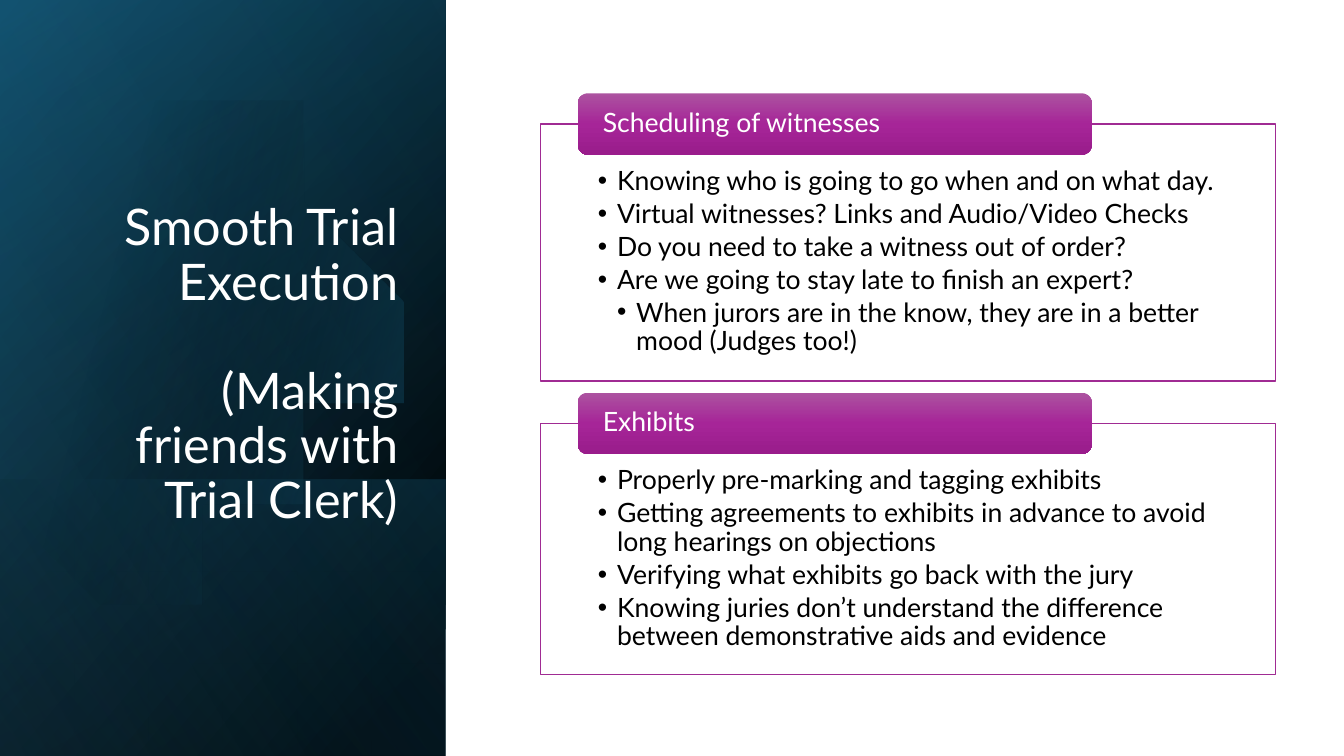
from lxml import etree
from pptx import Presentation
from pptx.dml.color import RGBColor
from pptx.enum.shapes import MSO_SHAPE
from pptx.enum.text import MSO_ANCHOR, PP_ALIGN
from pptx.oxml.ns import qn
from pptx.util import Inches, Pt

RECTANGLE, ROUNDED = MSO_SHAPE.RECTANGLE, MSO_SHAPE.ROUNDED_RECTANGLE
TOP, MIDDLE, BOTTOM = MSO_ANCHOR.TOP, MSO_ANCHOR.MIDDLE, MSO_ANCHOR.BOTTOM
LEFT, RIGHT = PP_ALIGN.LEFT, PP_ALIGN.RIGHT
FONT = "Lato"
WHITE, BLACK, PURPLE = "FFFFFF", "000000", "A02B93"

TITLE = ["Smooth Trial Execution", "(Making friends with Trial Clerk)"]

# Heading, panel top, panel height, bullets as (level, text)
SECTIONS = [
    ("Scheduling of witnesses", 1.23, 2.55, [
        (1, "Knowing who is going to go when and on what day."),
        (1, "Virtual witnesses? Links and Audio/Video Checks"),
        (1, "Do you need to take a witness out of order?"),
        (1, "Are we going to stay late to finish an expert?"),
        (2, "When jurors are in the know, they are in a better mood (Judges too!)"),
    ]),
    ("Exhibits", 4.2, 2.49, [
        (1, "Properly pre-marking and tagging exhibits"),
        (1, "Getting agreements to exhibits in advance to avoid long hearings on objections"),
        (1, "Verifying what exhibits go back with the jury"),
        (1, "Knowing juries don’t understand the difference between demonstrative aids and evidence"),
    ]),
]

# Gradient stops are (position %, colour, opacity %)
SIDEBAR_FRAME = (-1.54, 1.54, 7.5, 4.42)
BASE_LAYERS = [
    (SIDEBAR_FRAME, 50, [(8, BLACK, 100), (100, "104862", 100)]),
    (SIDEBAR_FRAME, 30, [(0, BLACK, 0), (99, "156082", 46)]),
    ((0.84, 3.92, 2.74, 4.42), 130, [(2, "156082", 29), (100, BLACK, 30)]),
]
GLOW_LAYER = (SIDEBAR_FRAME, 120, [(0, BLACK, 0), (99, "46B1E1", 11)])
DISC_STOPS = [(29, BLACK, 0), (100, "156082", 43)]
LABEL_STOPS = [(0, "AC53A0", 100), (50, "A62598", 100), (100, "991C8B", 100)]

# Disc outline: start point, then cubic curves (two handles and an end point)
DISC_START = (1.49, 1.1)
DISC_CURVES = [
    ((2.46, 1.12), (3.35, 1.77), (3.63, 2.75)),
    ((3.98, 3.97), (3.28, 5.23), (2.07, 5.58)),
    ((1.31, 5.8), (0.53, 5.61), (0, 5.16)),
    ((0, 4), (0, 2.8), (0, 1.61)),
    ((0.23, 1.42), (0.5, 1.28), (0.8, 1.19)),
    ((1.03, 1.13), (1.26, 1.1), DISC_START),
]
CURVE_STEPS = 16

PANEL_LEFT, PANEL_WIDTH = 5.36, 7.29
LABEL_INDENT, LABEL_WIDTH, LABEL_HEIGHT = 0.37, 5.1, 0.61
BULLET_INDENT = 0.19


def color(hex_text):
    return RGBColor.from_string(hex_text)


def fill_gradient(shape, angle, stops):
    shape.fill.gradient()
    gradient = shape._element.spPr.find(qn("a:gradFill"))
    gradient.find(qn("a:lin")).set("ang", str(angle * 60000))
    stop_list = gradient.find(qn("a:gsLst"))
    stop_list.clear()
    for position, hex_text, opacity in stops:
        stop = etree.SubElement(stop_list, qn("a:gs"), pos=str(position * 1000))
        tint = etree.SubElement(stop, qn("a:srgbClr"), val=hex_text)
        if opacity < 100:
            etree.SubElement(tint, qn("a:alpha"), val=str(opacity * 1000))


def add_plain(page, kind, frame):
    """Add a shape with no shadow and no outline."""
    shape = page.shapes.add_shape(kind, *map(Inches, frame))
    shape.shadow.inherit = False
    shape.line.fill.background()
    return shape


def add_layer(page, frame, angle, stops):
    """Add one turned and mirrored gradient layer of the sidebar."""
    layer = add_plain(page, RECTANGLE, frame)
    layer.rotation = 90
    layer._element.spPr.find(qn("a:xfrm")).set("flipH", "1")
    fill_gradient(layer, angle, stops)


def curve_points(start, curves):
    points = []
    for first, second, end in curves:
        for step in range(1, CURVE_STEPS + 1):
            t = step / CURVE_STEPS
            u = 1 - t
            points.append(tuple(
                u**3 * a + 3 * u * u * t * b + 3 * u * t * t * c + t**3 * d
                for a, b, c, d in zip(start, first, second, end)))
        start = end
    return points


def add_disc(page):
    builder = page.shapes.build_freeform(*DISC_START, scale=Inches(1))
    builder.add_line_segments(curve_points(DISC_START, DISC_CURVES))
    disc = builder.convert_to_shape()
    disc.shadow.inherit = False
    disc.line.fill.background()
    fill_gradient(disc, 14, DISC_STOPS)


def set_text(shape, lines, size, hex_text, align, anchor, insets):
    frame = shape.text_frame
    frame.word_wrap = True
    frame.vertical_anchor = anchor
    (frame.margin_left, frame.margin_top,
     frame.margin_right, frame.margin_bottom) = map(Inches, insets)
    frame.text = "\n".join(lines)
    for para in frame.paragraphs:
        para.alignment = align
        para.line_spacing = 0.9
        for span in para.runs:
            span.font.name = FONT
            span.font.size = Pt(size)
            span.font.color.rgb = color(hex_text)
    return frame.paragraphs


def add_bullet(para, level):
    properties = para._p.get_or_add_pPr()
    properties.set("lvl", str(level))
    properties.set("marL", str(Inches(BULLET_INDENT * level)))
    properties.set("indent", str(-Inches(BULLET_INDENT)))
    para.space_after = Pt(3)
    etree.SubElement(properties, qn("a:buFont"), typeface="Arial")
    etree.SubElement(properties, qn("a:buChar"), char="•")


def add_section(page, heading, top, height, bullets):
    panel = add_plain(page, RECTANGLE, (PANEL_LEFT, top, PANEL_WIDTH, height))
    panel.fill.solid()
    panel.fill.fore_color.rgb = color(WHITE)
    panel.line.color.rgb = color(PURPLE)
    panel.line.width = Pt(1)
    paras = set_text(panel, [text for _, text in bullets], 19, BLACK,
                     LEFT, TOP, (0.57, 0.43, 0.57, 0.15))
    for para, (level, _) in zip(paras, bullets):
        add_bullet(para, level)

    label = add_plain(page, ROUNDED, (PANEL_LEFT + LABEL_INDENT, top - LABEL_HEIGHT / 2,
                                      LABEL_WIDTH, LABEL_HEIGHT))
    fill_gradient(label, 90, LABEL_STOPS)
    set_text(label, [heading], 19, WHITE, LEFT, MIDDLE, (0.22, 0, 0.22, 0))


def main():
    deck = Presentation()
    deck.slide_width, deck.slide_height = Inches(13.33), Inches(7.5)
    page = deck.slides.add_slide(deck.slide_layouts[6])

    for layer in BASE_LAYERS:
        add_layer(page, *layer)
    add_disc(page)
    add_layer(page, *GLOW_LAYER)

    title = page.shapes.add_textbox(*map(Inches, (0.64, 1.84, 3.41, 3.46)))
    paras = set_text(title, TITLE, 36, WHITE, RIGHT, BOTTOM, (0.1, 0.05, 0.1, 0.05))
    paras[1].space_before = Pt(39)

    for section in SECTIONS:
        add_section(page, *section)
    deck.save("out.pptx")


if __name__ == "__main__":
    main()
